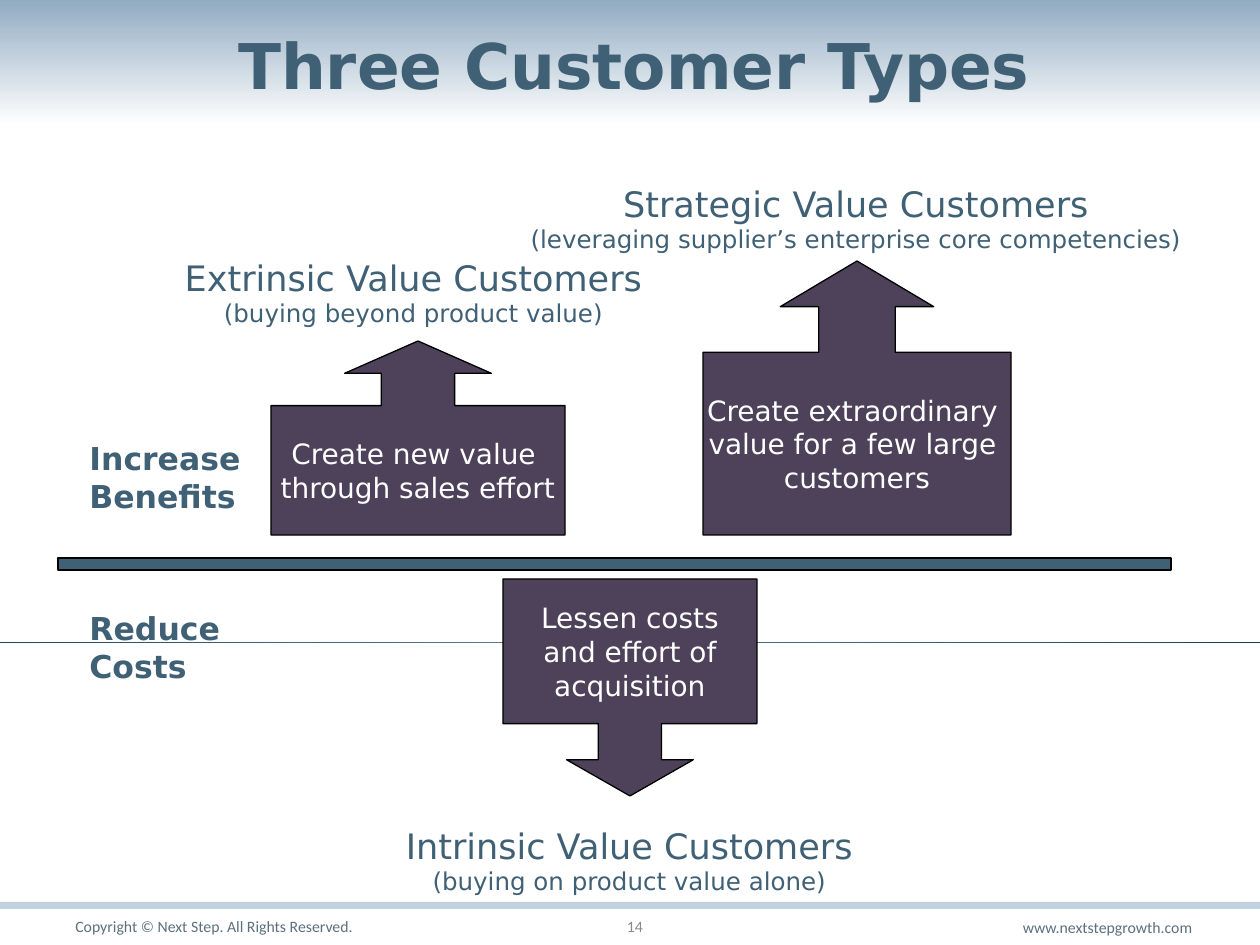
from copy import deepcopy
from pptx import Presentation
from pptx.dml.color import RGBColor as RGB
from pptx.enum.shapes import MSO_SHAPE as SHAPE
from pptx.enum.text import MSO_ANCHOR as ANCHOR, MSO_AUTO_SIZE as FIT, PP_ALIGN as ALIGN
from pptx.oxml.ns import qn
from pptx.util import Emu, Pt

HUE = {"blue": "3F6075", "plum": "4D425A", "navy": "1C3F56", "steel": "637E94",
       "sky": "91ABC2", "pale": "C1D1DE", "slate": "5D707E", "gray": "898989",
       "white": "FFFFFF", "black": "000000"}


def write(frame, text, sizes=(16,), font="DejaVu Sans", hue="blue", bold=False,
          align=ALIGN.CENTER, anchor=ANCHOR.TOP, wrap=False, fit=FIT.NONE):
    frame.word_wrap = wrap
    frame.auto_size = fit
    frame.vertical_anchor = anchor
    for i, line in enumerate(text.split("\n")):
        para = frame.paragraphs[0] if i == 0 else frame.add_paragraph()
        para.alignment = align
        run = para.add_run()
        run.text = line
        run.font.name = font
        run.font.size = Pt(sizes[min(i, len(sizes) - 1)])
        run.font.bold = bold
        run.font.color.rgb = RGB.from_string(HUE[hue])


def draw(kind, box, hue=None, edge=False):
    shape = slide.shapes.add_shape(kind, *[px(n) for n in box])
    shape.shadow.inherit = False
    if hue:
        shape.fill.solid()
        shape.fill.fore_color.rgb = RGB.from_string(HUE[hue])
    if edge:
        shape.line.color.rgb = RGB.from_string(HUE["black"])
        shape.line.width = Pt(0.75)
    else:
        shape.line.fill.background()
    return shape


px = lambda n: Emu(round(n * 914400 / 126))
deck = Presentation()
deck.slide_width, deck.slide_height = px(1260), px(945)
slide = deck.slides.add_slide(deck.slide_layouts[6])

rule = draw(SHAPE.RIGHT_TRIANGLE, (0, 642, 1261, 1))
rule.rotation = 180
band = draw(SHAPE.RECTANGLE, (0, 0, 1260, 125))
for shape, angle, stops in [
    (rule, 310, [(0, "navy"), (0.55, "steel"), (1, "navy")]),
    (band, 90, [(0, "white"), (1, "sky")]),
]:
    fill = shape.fill
    fill.gradient()
    fill.gradient_angle = angle
    marks = shape._element.spPr.find(qn("a:gradFill")).find(qn("a:gsLst"))
    while len(marks) < len(stops):
        marks.append(deepcopy(marks[0]))
    for stop, (place, hue) in zip(fill.gradient_stops, stops):
        stop.position = place
        stop.color.rgb = RGB.from_string(HUE[hue])

draw(SHAPE.RECTANGLE, (0, 902, 1260, 7), "pale")

for text, box, align, hue in [
    ("Copyright ©\u00a0Next Step. All Rights Reserved.", (63, 908, 414, 36), ALIGN.LEFT, "slate"),
    ("www.nextstepgrowth.com ", (771, 910, 437, 35), ALIGN.RIGHT, "slate"),
    ("14", (572, 908, 126, 36), ALIGN.CENTER, "gray"),
]:
    note = slide.shapes.add_textbox(*[px(n) for n in box])
    write(note.text_frame, text, sizes=(9,), font="Calibri", hue=hue,
          align=align, anchor=ANCHOR.MIDDLE, wrap=True)

title = slide.shapes.add_textbox(px(67), px(20), px(1134), px(128))
write(title.text_frame, "Three Customer Types", sizes=(36,), bold=True, wrap=True)

for kind, box, shaft, text in [
    (SHAPE.UP_ARROW_CALLOUT, (271, 341, 294, 194), 0.378,
     "Create new value \nthrough sales effort"),
    (SHAPE.DOWN_ARROW_CALLOUT, (503, 579, 254, 217), 0.292,
     "Lessen costs\nand effort of\nacquisition"),
    (SHAPE.UP_ARROW_CALLOUT, (703, 261, 308, 274), 0.28,
     "Create extraordinary \nvalue for a few large \ncustomers"),
]:
    arrow = draw(kind, box, "plum", edge=True)
    for i, part in enumerate((shaft, shaft, 0.16667, 0.66667)):
        arrow.adjustments[i] = part
    write(arrow.text_frame, text, hue="white", anchor=ANCHOR.MIDDLE)

draw(SHAPE.RECTANGLE, (58, 558, 1113, 12), "blue", edge=True)

for text, top, width in [("Increase\nBenefits", 433, 183), ("Reduce\nCosts", 603, 156)]:
    side = slide.shapes.add_textbox(px(77), px(top), px(width), px(89))
    write(side.text_frame, text, sizes=(18,), bold=True, align=ALIGN.LEFT,
          fit=FIT.SHAPE_TO_FIT_TEXT)

for text, left, top, width in [
    ("Extrinsic Value Customers\n(buying beyond product value)", 170, 250, 487),
    ("Strategic Value Customers\n(leveraging supplier’s enterprise core competencies)", 517, 176, 678),
    ("Intrinsic Value Customers\n(buying on product value alone)", 389, 818, 481),
]:
    head = slide.shapes.add_textbox(px(left), px(top), px(width), px(84))
    write(head.text_frame, text, sizes=(20, 14), fit=FIT.SHAPE_TO_FIT_TEXT)

deck.save("out.pptx")
